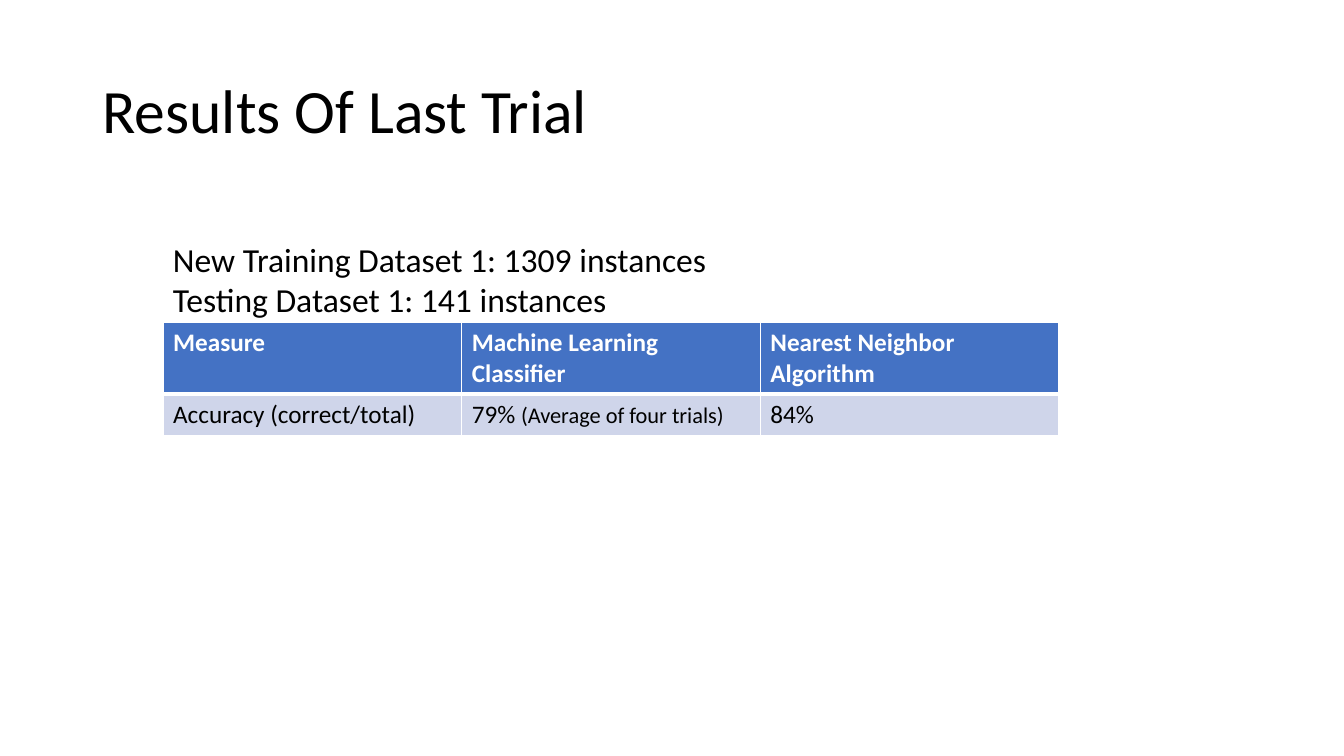
from lxml import etree
from pptx import Presentation
from pptx.dml.color import RGBColor
from pptx.enum.text import MSO_ANCHOR, MSO_AUTO_SIZE, PP_ALIGN
from pptx.oxml.ns import qn
from pptx.util import Cm, Pt

LEFT = PP_ALIGN.LEFT
MIDDLE = MSO_ANCHOR.MIDDLE
NO_FIT = MSO_AUTO_SIZE.NONE
GROW = MSO_AUTO_SIZE.SHAPE_TO_FIT_TEXT

BLACK = RGBColor(0x00, 0x00, 0x00)
WHITE = RGBColor(0xFF, 0xFF, 0xFF)
HEADER_BLUE = RGBColor(0x44, 0x72, 0xC4)
BAND_BLUE = RGBColor(0xCF, 0xD5, 0xEA)

TITLE_ONLY = 5
TABLE_LEFT = Cm(4.11)


class ResultsSlide:
    font_name = "Calibri"

    def __init__(self, deck):
        self.page = deck.slides.add_slide(deck.slide_layouts[TITLE_ONLY])

    def style(self, para, size, color=BLACK, bold=False):
        font = para.font
        font.name, font.size, font.bold = self.font_name, Pt(size), bold
        font.color.rgb = color

    def title(self, text, left, top, width, height):
        box = self.page.shapes.title
        box.left, box.top, box.width, box.height = left, top, width, height
        frame = box.text_frame
        frame.text = text
        frame.auto_size = NO_FIT
        frame.vertical_anchor = MIDDLE
        para = frame.paragraphs[0]
        para.alignment = LEFT
        para.line_spacing = 0.9
        self.style(para, 44)

    def text(self, lines, left, top, width, height):
        frame = self.page.shapes.add_textbox(left, top, width, height).text_frame
        frame.word_wrap = True
        frame.auto_size = GROW
        frame.text = "\n".join(lines)
        for para in frame.paragraphs:
            self.style(para, 24)

    def borders(self, cell, widths):
        properties = cell._tc.get_or_add_tcPr()
        for index, (side, width) in enumerate(widths.items()):
            line = etree.Element(qn("a:ln" + side), w=str(Pt(width)))
            fill = etree.SubElement(line, qn("a:solidFill"))
            etree.SubElement(fill, qn("a:srgbClr"), val=str(WHITE))
            properties.insert(index, line)

    def table(self, rows, row_heights, left, top, width):
        shape = self.page.shapes.add_table(
            len(rows), len(rows[0]), left, top, width, sum(row_heights))
        table = shape.table
        for row_index, (texts, height) in enumerate(zip(rows, row_heights)):
            table.rows[row_index].height = height
            header = row_index == 0
            for column_index, spans in enumerate(texts):
                cell = table.cell(row_index, column_index)
                cell.fill.solid()
                cell.fill.fore_color.rgb = HEADER_BLUE if header else BAND_BLUE
                para = cell.text_frame.paragraphs[0]
                self.style(para, 18, WHITE if header else BLACK, header)
                for text, size in spans:
                    span = para.add_run()
                    span.text = text
                    span.font.size = Pt(size)
                # The thick rule lies between header and body
                self.borders(cell, {"L": 1, "R": 1, "T": 1 if header else 3,
                                    "B": 3 if header else 1})


def main():
    deck = Presentation()
    deck.slide_width, deck.slide_height = Cm(33.87), Cm(19.05)
    slide = ResultsSlide(deck)

    # Title
    slide.title("Results Of Last Trial", Cm(2.33), Cm(1.01), Cm(29.21), Cm(3.68))

    # Accuracy table
    rows = [
        [[("Measure", 18)], [("Machine Learning Classifier", 18)],
         [("Nearest Neighbor Algorithm", 18)]],
        [[("Accuracy (correct/total)", 18)],
         [("79% ", 18), ("(Average of four trials)", 16)], [("84%", 18)]],
    ]
    slide.table(rows, [Cm(1.78), Cm(1.03)], TABLE_LEFT, Cm(8.13), Cm(22.58))

    # Dataset sizes
    slide.text(["New Training Dataset 1: 1309 instances",
                "Testing Dataset 1: 141 instances"],
               TABLE_LEFT, Cm(5.89), Cm(15.75), Cm(2.31))

    deck.save("out.pptx")


if __name__ == "__main__":
    main()
